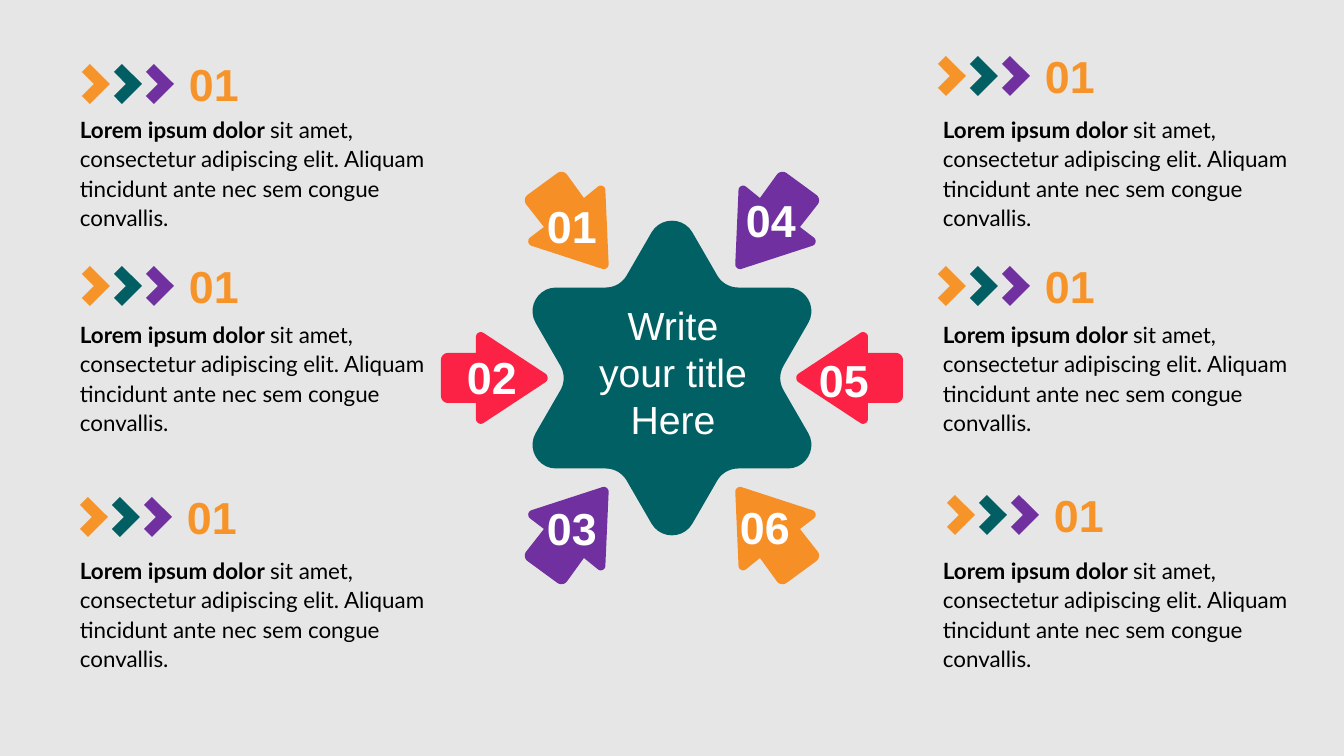
import math

import pptx
import pptx.dml.color
import pptx.enum.text
import pptx.util

PX = 12192000 / 1344  # EMU per px
SLIDE_W, SLIDE_H = 1344, 756
CENTER_X, CENTER_Y = 672, 378

COLORS = {
    "background": "E6E6E6", "star": "006064", "red": "FB2245",
    "purple": "7030A0", "orange": "F69026", "heading": "F69429",
    "teal": "015E63", "white": "FFFFFF", "black": "000000",
}

TITLE = "Write your title Here"
BODY = [("Lorem ipsum dolor ", True),
        ("sit amet, consectetur adipiscing elit. Aliquam tincidunt ante "
         "nec sem congue convallis.", False)]

# heading number, left and middle of its chevrons, left and top of its body
ITEMS = [
    ("01", (82, 84), (60, 103)),
    ("01", (82, 286), (60, 308)),
    ("01", (80, 517), (60, 544)),
    ("01", (938, 76), (923, 103)),
    ("01", (938, 286), (923, 308)),
    ("01", (947, 515), (923, 544)),
]
CHEVRON = [(8, -20), (28, 0), (8, 20), (0, 12), (12, 0), (0, -12)]
CHEVRON_COLORS = ["heading", "teal", "purple"]
CHEVRON_STEP = 32

# corners from the hub's center, each with the length its rounding trims off
SIDE_ARROW = [(120, 0, 8), (196, -50, 9), (196, -25, 0), (231, -25, 7),
              (231, 25, 7), (196, 25, 0), (196, 50, 9)]
CORNER_ARROW = [(63, -107, 7), (149, -135, 9), (128, -151, 0), (150, -179, 7),
                (109, -209, 7), (88, -180, 0), (67, -197, 9)]

# label, its left and top, outline, horizontal and vertical flip, color
ARROWS = [
    ("01", (537, 194), CORNER_ARROW, -1, 1, "orange"),
    ("02", (457, 345), SIDE_ARROW, -1, 1, "red"),
    ("03", (537, 496), CORNER_ARROW, -1, -1, "purple"),
    ("04", (736, 188), CORNER_ARROW, 1, 1, "purple"),
    ("05", (809, 348), SIDE_ARROW, 1, 1, "red"),
    ("06", (730, 495), CORNER_ARROW, 1, -1, "orange"),
]


def emu(px):
    return pptx.util.Emu(round(px * PX))


def rgb(name):
    return pptx.dml.color.RGBColor.from_string(COLORS[name])


def star_corners(radius=181, outer_trim=41, inner_trim=14):
    """Corners of a six-pointed star, tips and notches in turn."""
    corners = []
    for i in range(12):
        r, trim = ((radius, outer_trim) if i % 2 == 0
                   else (radius / math.sqrt(3), inner_trim))
        angle = math.radians(30 * i - 90)
        corners.append((r * math.cos(angle), r * math.sin(angle), trim))
    return corners


def rounded(corners, steps=10):
    """Outline points with each corner replaced by a circular arc."""
    points = []
    for i, (x, y, trim) in enumerate(corners):
        if not trim:
            points.append((x, y))
            continue
        ends = []
        for nx, ny, _ in (corners[i - 1], corners[(i + 1) % len(corners)]):
            length = math.hypot(nx - x, ny - y)
            ends.append(((nx - x) / length, (ny - y) / length))
        (ux, uy), (vx, vy) = ends
        turn = math.pi - math.acos(ux * vx + uy * vy)
        pull = 1 - 4 / 3 * math.tan(turn / 4) / math.tan(turn / 2)
        for k in range(steps + 1):
            t = k / steps
            a = trim * ((1 - t) ** 3 + 3 * t * (1 - t) ** 2 * pull)
            b = trim * (t ** 3 + 3 * t ** 2 * (1 - t) * pull)
            points.append((x + a * ux + b * vx, y + a * uy + b * vy))
    return points


def add_outline(shapes, points, left, top, color):
    placed = [(emu(left + x), emu(top + y)) for x, y in points]
    builder = shapes.build_freeform(*placed[0])
    builder.add_line_segments(placed[1:], close=True)
    sp = builder.convert_to_shape()
    sp.shadow.inherit = False
    sp.fill.solid()
    sp.fill.fore_color.rgb = rgb(color)
    sp.line.fill.background()


def add_run(p, text, font, size, color, bold):
    r = p.add_run()
    r.text = text
    r.font.name = font
    r.font.size = pptx.util.Pt(size)
    r.font.bold = bold
    r.font.color.rgb = rgb(color)


def add_number(shapes, text, left, top, color):
    sp = shapes.add_textbox(emu(left), emu(top), emu(70), emu(64))
    sp.text_frame.word_wrap = False
    add_run(sp.text_frame.paragraphs[0], text, "Arial", 32, color, True)


def add_body(shapes, left, top):
    sp = shapes.add_textbox(emu(left), emu(top), emu(387), emu(138))
    tf = sp.text_frame
    tf.word_wrap = True
    tf.margin_left = tf.margin_right = emu(20)
    tf.margin_top = tf.margin_bottom = emu(10)
    p = tf.paragraphs[0]
    p.line_spacing = 1.1
    for text, bold in BODY:
        add_run(p, text, "Lato", 16, "black", bold)


def place_title(sp):
    sp.left, sp.top, sp.width, sp.height = map(emu, (588, 296, 170, 152))
    tf = sp.text_frame
    tf.word_wrap = True
    tf.auto_size = pptx.enum.text.MSO_AUTO_SIZE.NONE
    tf.vertical_anchor = pptx.enum.text.MSO_ANCHOR.TOP
    tf.margin_left = tf.margin_right = tf.margin_top = tf.margin_bottom = emu(5)
    p = tf.paragraphs[0]
    p.alignment = pptx.enum.text.PP_ALIGN.CENTER
    add_run(p, TITLE, "Arial", 28, "white", False)
    sp.element.getparent().append(sp.element)  # bring in front of the star


def main():
    prs = pptx.Presentation()
    prs.slide_width, prs.slide_height = emu(SLIDE_W), emu(SLIDE_H)
    slide = prs.slides.add_slide(prs.slide_layouts[5])
    slide.background.fill.solid()
    slide.background.fill.fore_color.rgb = rgb("background")

    hub = slide.shapes.add_group_shape().shapes
    add_outline(hub, rounded(star_corners()), CENTER_X, CENTER_Y, "star")
    for _, _, corners, flip_x, flip_y, color in ARROWS:
        points = [(x * flip_x, y * flip_y) for x, y in rounded(corners)]
        add_outline(hub, points, CENTER_X, CENTER_Y, color)
    place_title(slide.shapes.title)
    for label, (left, top), *_ in ARROWS:
        add_number(slide.shapes, label, left, top, "white")

    for number, (left, middle), body_at in ITEMS:
        add_body(slide.shapes, *body_at)
        chevrons = slide.shapes.add_group_shape().shapes
        for i, color in enumerate(CHEVRON_COLORS):
            add_outline(chevrons, CHEVRON, left + i * CHEVRON_STEP, middle, color)
        add_number(slide.shapes, number, left + 97, middle - 32, "heading")

    prs.save("out.pptx")


if __name__ == "__main__":
    main()
